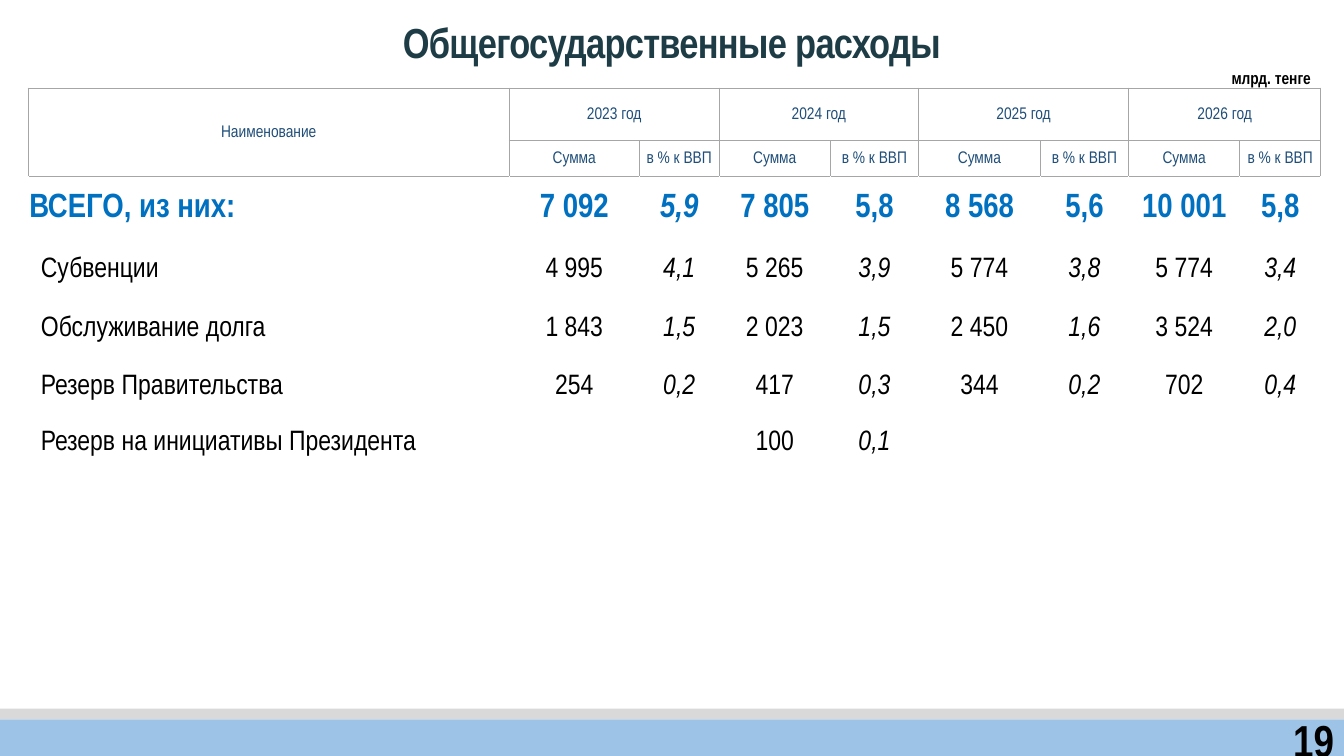
import pptx
import pptx.util
import pptx.oxml
import pptx.dml.color
import pptx.enum.shapes
import pptx.enum.text
import lxml.etree

PX = 9525
FONT = "Arial Narrow"
COLORS = {"title": "1D3C45", "header": "1F4E79", "total": "0070C0", "text": "000000",
          "border": "A6A6A6", "bar": "9DC3E6", "strip": "D9D9D9"}
ALIGN = pptx.enum.text.PP_ALIGN
MIDDLE = pptx.enum.text.MSO_ANCHOR.MIDDLE
YEARS = ["2023 год", "2024 год", "2025 год", "2026 год"]
COLUMNS = [458, 124, 76, 106, 84, 116, 84, 106, 77]
HEIGHTS = [50, 34, 61, 55, 58, 53, 53]
BODY = [
    ["ВСЕГО, из них:", "7 092", "5,9", "7 805", "5,8", "8 568", "5,6", "10 001", "5,8"],
    ["Субвенции", "4 995", "4,1", "5 265", "3,9", "5 774", "3,8", "5 774", "3,4"],
    ["Обслуживание долга", "1 843", "1,5", "2 023", "1,5", "2 450", "1,6", "3 524", "2,0"],
    ["Резерв Правительства", "254", "0,2", "417", "0,3", "344", "0,2", "702", "0,4"],
    ["Резерв на инициативы Президента", "", "", "100", "0,1", "", "", "", ""],
]


def px(*values):
    """Turn pixel lengths into EMU."""
    return [pptx.util.Emu(v * PX) for v in values]


def rgb(name):
    """Look up a named colour."""
    return pptx.dml.color.RGBColor.from_string(COLORS[name])


def add_text(tf, text, size, color, align, bold=False, italic=False):
    """Write one formatted run into the first paragraph and return the run."""
    p = tf.paragraphs[0]
    p.alignment = align
    r = p.add_run()
    r.text = text
    r.font.name = FONT
    r.font.size = pptx.util.Pt(size)
    r.font.bold = bold
    r.font.italic = italic
    r.font.color.rgb = rgb(color)
    return r


def add_title(s, text):
    """Place the slide title."""
    sp = s.shapes.title
    sp.left, sp.top, sp.width, sp.height = px(0, 12, 1280, 50)
    tf = sp.text_frame
    tf.auto_size = pptx.enum.text.MSO_AUTO_SIZE.NONE
    tf.vertical_anchor = MIDDLE
    r = add_text(tf, text, 30, "title", ALIGN.CENTER, bold=True)
    r.font._element.set("spc", "-50")
    tf.paragraphs[0].line_spacing = 1.1


def add_unit(s, text):
    """Place the unit note above the table."""
    tf = s.shapes.add_textbox(*px(1143, 50, 115, 46)).text_frame
    tf.word_wrap = True
    tf.vertical_anchor = MIDDLE
    add_text(tf, text, 12, "text", ALIGN.RIGHT, bold=True)
    tf.paragraphs[0].line_spacing = 1.1


def add_band(s, top, height, color):
    """Draw a full-width band and return it."""
    sp = s.shapes.add_shape(pptx.enum.shapes.MSO_SHAPE.RECTANGLE, *px(0, top, 1280, height))
    sp.shadow.inherit = False
    sp.fill.solid()
    sp.fill.fore_color.rgb = rgb(color)
    sp.line.fill.background()
    return sp


def set_borders(cell, sides):
    """Give a cell thin grey lines on the named sides."""
    tcPr = cell._tc.get_or_add_tcPr()
    for side in sides:
        ln = lxml.etree.SubElement(tcPr, pptx.oxml.ns.qn("a:ln" + side), w="12700")
        fill = lxml.etree.SubElement(ln, pptx.oxml.ns.qn("a:solidFill"))
        lxml.etree.SubElement(fill, pptx.oxml.ns.qn("a:srgbClr"), val=COLORS["border"])


def fill_cell(cell, row, col, text):
    """Format one table cell by its row and column."""
    header, total = row < 2, row == 2
    if header or total:
        set_borders(cell, "LRTB" if header else "T")
    cell.fill.background()
    indent = 12 if col == 0 and row > 2 else 1
    cell.margin_left, cell.margin_top, cell.margin_right, cell.margin_bottom = px(indent, 1, 1, 0)
    cell.vertical_anchor = MIDDLE
    if not text:
        return
    size, color = (12, "header") if header else (24, "total") if total else (20, "text")
    align = ALIGN.LEFT if col == 0 and not header else ALIGN.CENTER
    percent = col > 0 and col % 2 == 0
    italic = percent and (row > 2 or (total and col == 2))
    add_text(cell.text_frame, text, size, color, align, bold=total, italic=italic)


def add_expenses(s):
    """Build the expenses table."""
    years = ["Наименование"] + [t for year in YEARS for t in (year, "")]
    rows = [years, [""] + ["Сумма", "в % к ВВП"] * len(YEARS)] + BODY
    frame = s.shapes.add_table(len(rows), len(COLUMNS),
                               *px(27, 84, sum(COLUMNS), sum(HEIGHTS)))
    table = frame.table
    table.first_row = table.horz_banding = False
    for column, width in zip(table.columns, px(*COLUMNS)):
        column.width = width
    for row, height in zip(table.rows, px(*HEIGHTS)):
        row.height = height
    for i, texts in enumerate(rows):
        for j, text in enumerate(texts):
            fill_cell(table.cell(i, j), i, j, text)
    table.cell(0, 0).merge(table.cell(1, 0))
    for j in range(1, len(COLUMNS), 2):
        table.cell(0, j).merge(table.cell(0, j + 1))


def main():
    """Build and save the slide."""
    prs = pptx.Presentation()
    prs.slide_width, prs.slide_height = px(1280, 720)
    s = prs.slides.add_slide(prs.slide_layouts[5])
    add_title(s, "Общегосударственные расходы")
    add_expenses(s)
    tf = add_band(s, 685, 38, "bar").text_frame
    tf.vertical_anchor = MIDDLE
    add_text(tf, "19", 32, "text", ALIGN.RIGHT, bold=True)
    add_band(s, 675, 10, "strip")
    add_unit(s, "млрд. тенге")
    prs.save("out.pptx")


if __name__ == "__main__":
    main()
